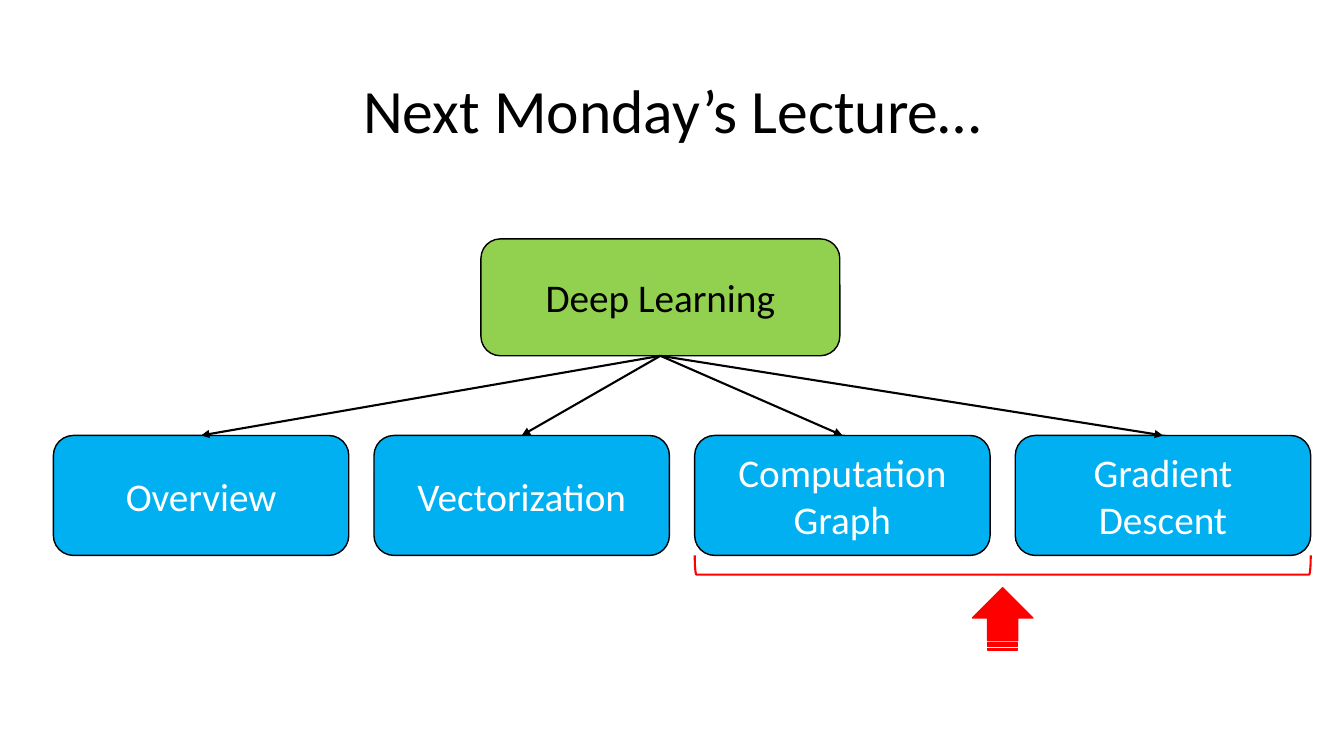
from lxml.etree import SubElement
from pptx import Presentation
from pptx.dml.color import RGBColor
from pptx.enum.shapes import MSO_CONNECTOR, MSO_SHAPE
from pptx.enum.text import MSO_ANCHOR, PP_ALIGN
from pptx.oxml.ns import qn
from pptx.util import Inches, Pt

COLORS = {"black": "000000", "white": "FFFFFF", "green": "92D050",
          "blue": "00B0F0", "red": "FF0000"}
FONT = "Calibri"
TOPICS = ["Overview", "Vectorization", "Computation Graph", "Gradient Descent"]
TOPIC_WIDTH, TOPIC_PITCH = 2.93, 3.18
BOTTOM_SITE, TOP_SITE = 2, 0


def color(name):
    return RGBColor.from_string(COLORS[name])


def write(frame, text, size, ink):
    frame.word_wrap = True
    frame.vertical_anchor = MSO_ANCHOR.MIDDLE
    para = frame.paragraphs[0]
    para.alignment = PP_ALIGN.CENTER
    span = para.add_run()
    span.text = text
    span.font.name = FONT
    span.font.size = Pt(size)
    span.font.color.rgb = color(ink)
    return para


def add_outline(page, kind, box, line, width, fill=None):
    shape = page.shapes.add_shape(kind, *map(Inches, box))
    shape.shadow.inherit = False
    shape.line.color.rgb = color(line)
    shape.line.width = Pt(width)
    if fill:
        shape.fill.solid()
        shape.fill.fore_color.rgb = color(fill)
    else:
        shape.fill.background()
    return shape


def add_node(page, box, text, fill, ink):
    node = add_outline(page, MSO_SHAPE.ROUNDED_RECTANGLE, box, "black", 1, fill)
    write(node.text_frame, text, 28, ink)
    return node


def add_branch(page, parent, child):
    branch = page.shapes.add_connector(MSO_CONNECTOR.STRAIGHT, 0, 0, 0, 0)
    branch.begin_connect(parent, BOTTOM_SITE)
    branch.end_connect(child, TOP_SITE)
    branch.line.color.rgb = color("black")
    branch.line.width = Pt(1.5)
    SubElement(branch.line._get_or_add_ln(), qn("a:tailEnd"), type="triangle")
    SubElement(branch._element.spPr, qn("a:effectLst"))


def add_title(page, box):
    title = page.shapes.title
    title.left, title.top, title.width, title.height = map(Inches, box)
    write(title.text_frame, "Next Monday’s Lecture…", 44, "black").line_spacing = 0.9


def add_tree(page, box):
    left, top, width, height = box
    root = add_node(page, (left + 4.24, top, 3.56, 1.16), "Deep Learning", "green", "black")
    for column, topic in enumerate(TOPICS):
        place = (left + column * TOPIC_PITCH, top + height - 1.19, TOPIC_WIDTH, 1.19)
        add_branch(page, root, add_node(page, place, topic, "blue", "white"))


def add_highlight(page, box):
    left, top, width, height = box
    center = left + width / 2
    depth = 0.19
    bracket = add_outline(page, MSO_SHAPE.RIGHT_BRACKET,
                          (center - depth / 2, top + depth / 2 - width / 2, depth, width),
                          "red", 1.5)
    bracket.rotation = 90
    arrow = add_outline(page, MSO_SHAPE.STRIPED_RIGHT_ARROW,
                        (center - 0.31, top + height - 0.63, 0.62, 0.6), "red", 1, "red")
    arrow.rotation = 270


def main():
    deck = Presentation()
    deck.slide_width, deck.slide_height = Inches(13.33), Inches(7.5)
    page = deck.slides.add_slide(deck.slide_layouts[5])
    add_title(page, (0.92, 0.4, 11.5, 1.45))
    add_tree(page, (0.53, 2.37, 12.47, 3.14))
    add_highlight(page, (0.53 + 2 * TOPIC_PITCH, 5.51, TOPIC_PITCH + TOPIC_WIDTH, 0.96))
    deck.save("out.pptx")


if __name__ == "__main__":
    main()
